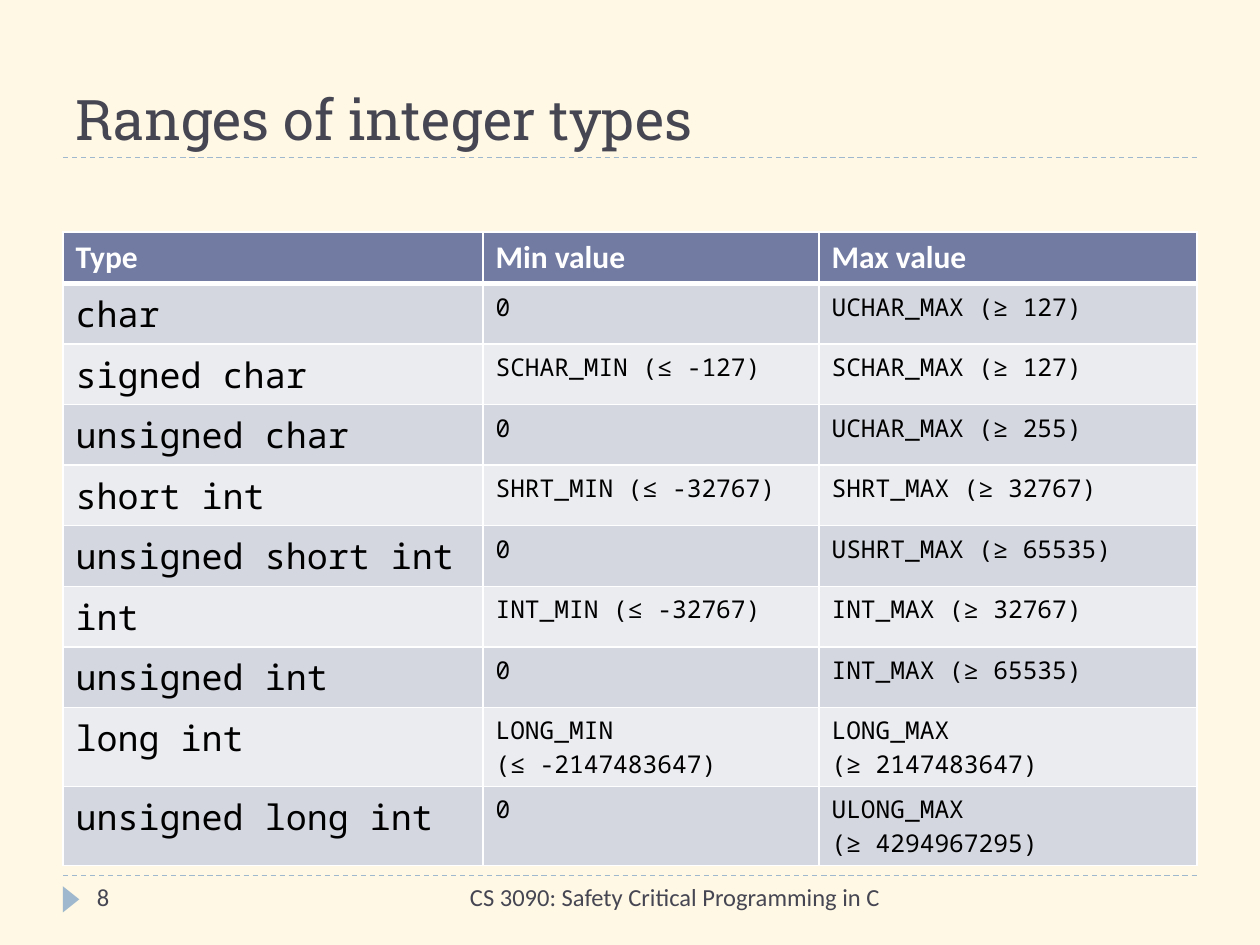
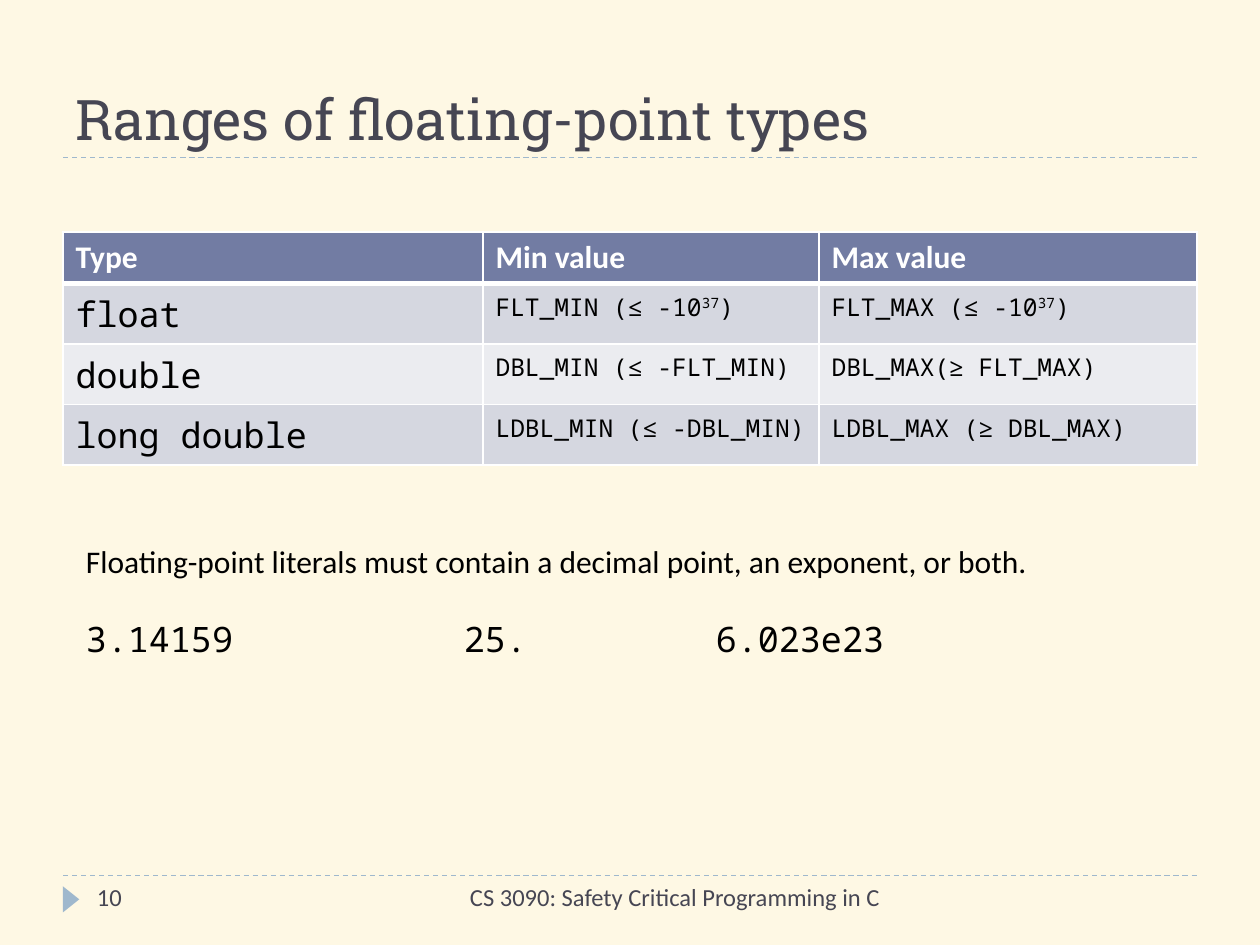
"""Build two slides on the ranges of the C number types."""
from dataclasses import dataclass

from lxml.etree import SubElement
from pptx import Presentation
from pptx.dml.color import RGBColor
from pptx.enum.dml import MSO_LINE_DASH_STYLE as Dash
from pptx.enum.shapes import MSO_CONNECTOR as Connector, MSO_SHAPE as Preset
from pptx.enum.text import MSO_ANCHOR as Anchor, PP_ALIGN as Align
from pptx.oxml.ns import qn
from pptx.util import Pt

COLORS = {
    "background": "FEF8E4",
    "accent": "9FB8CD",
    "heading": "464653",
    "text": "000000",
    "white": "FFFFFF",
    "header": "727CA3",
    "odd_row": "D5D7E0",
    "even_row": "EBECF0",
}
SERIF, SANS, MONO = "Roboto Slab", "Calibri", "Noto Sans Mono"
LEFT, WIDTH = 36, 648
TITLE_RULE, FOOTER_RULE = 90, 500.4
TABLE_TOP = 132.5
HEADER_HEIGHT, ROW_HEIGHT, TALL_ROW_HEIGHT = 29.6, 34.6, 45.2
COLUMN_WIDTHS = (240, 192, 216)
HEADINGS = ("Type", "Min value", "Max value")
FOOTER = "CS 3090: Safety Critical Programming in C"
TAB_STEP = 72


@dataclass(frozen=True)
class Box:
    left: float
    top: float
    width: float
    height: float

    def lengths(self) -> tuple:
        return tuple(Pt(n) for n in (self.left, self.top, self.width, self.height))


@dataclass(frozen=True)
class TypeRange:
    name: str
    minimum: str
    maximum: str

    def height(self) -> float:
        return TALL_ROW_HEIGHT if "\n" in self.maximum else ROW_HEIGHT


@dataclass(frozen=True)
class RangeSlide:
    title: str
    number: int
    ranges: tuple[TypeRange, ...]


INTEGERS = RangeSlide("Ranges of integer types", 8, (
    TypeRange("char", "0", "UCHAR_MAX (≥ 127)"),
    TypeRange("signed char", "SCHAR_MIN (≤ -127)", "SCHAR_MAX (≥ 127)"),
    TypeRange("unsigned char", "0", "UCHAR_MAX (≥ 255)"),
    TypeRange("short int", "SHRT_MIN (≤ -32767)", "SHRT_MAX (≥ 32767)"),
    TypeRange("unsigned short int", "0", "USHRT_MAX (≥ 65535)"),
    TypeRange("int", "INT_MIN (≤ -32767)", "INT_MAX (≥ 32767)"),
    TypeRange("unsigned int", "0", "INT_MAX (≥ 65535)"),
    TypeRange("long int", "LONG_MIN\n(≤ -2147483647)", "LONG_MAX\n(≥ 2147483647)"),
    TypeRange("unsigned long int", "0", "ULONG_MAX\n(≥ 4294967295)"),
))
FLOATS = RangeSlide("Ranges of floating-point types", 10, (
    TypeRange("float", "FLT_MIN (≤ -10^37^)", "FLT_MAX (≤ -10^37^)"),
    TypeRange("double", "DBL_MIN (≤ -FLT_MIN)", "DBL_MAX(≥ FLT_MAX)"),
    TypeRange("long double", "LDBL_MIN (≤ -DBL_MIN)", "LDBL_MAX (≥ DBL_MAX)"),
))


def rgb(name: str) -> RGBColor:
    return RGBColor.from_string(COLORS[name])


def write(paragraph, text: str, *, size: float, font: str = SANS, color: str = "text",
          bold: bool = False, align=Align.LEFT, before: float = 0) -> None:
    """Add text to a paragraph, raising the parts between carets."""
    paragraph.alignment = align
    paragraph.space_before = Pt(before)
    for index, part in enumerate(text.split("^")):
        run = paragraph.add_run()
        run.text = part
        run.font.name = font
        run.font.size = Pt(size)
        run.font.bold = bold
        run.font.color.rgb = rgb(color)
        if index % 2:
            run._r.get_or_add_rPr().set("baseline", "30000")


def add_text_box(slide, box: Box):
    frame = slide.shapes.add_textbox(*box.lengths()).text_frame
    frame.word_wrap = True
    return frame


def add_rule(slide, top: float) -> None:
    rule = slide.shapes.add_connector(
        Connector.STRAIGHT, Pt(LEFT), Pt(top), Pt(LEFT + WIDTH), Pt(top))
    rule.line.color.rgb = rgb("accent")
    rule.line.width = Pt(0.75)
    rule.line.dash_style = Dash.DASH
    SubElement(rule._element.spPr, qn("a:effectLst"))


def add_frame(slide, title: str, number: int) -> None:
    for top in (FOOTER_RULE, TITLE_RULE):
        add_rule(slide, top)
    marker = slide.shapes.add_shape(
        Preset.ISOSCELES_TRIANGLE, *Box(33.1, 509.2, 15, 9.4).lengths())
    marker.rotation = 90
    marker.shadow.inherit = False
    marker.fill.solid()
    marker.fill.fore_color.rgb = rgb("accent")
    marker.line.fill.background()

    heading = slide.shapes.title
    heading.left, heading.top, heading.width, heading.height = Box(
        LEFT, 12.5, WIDTH, TITLE_RULE - 12).lengths()
    heading.text_frame.vertical_anchor = Anchor.BOTTOM
    write(heading.text_frame.paragraphs[0], title, size=32, font=SERIF, color="heading")

    footer = add_text_box(slide, Box(222, FOOTER_RULE, 288, 28.8))
    write(footer.paragraphs[0], FOOTER, size=14, color="heading", align=Align.RIGHT)
    page = add_text_box(slide, Box(48.3, FOOTER_RULE, 156, 28.8))
    write(page.paragraphs[0], str(number), size=14, color="heading")


def style_cell(cell, fill: str, top: float = 1, bottom: float = 1) -> None:
    properties = cell._tc.get_or_add_tcPr()
    for side, width in (("L", 1), ("R", 1), ("T", top), ("B", bottom)):
        border = SubElement(properties, qn(f"a:ln{side}"), w=str(Pt(width)))
        paint = SubElement(border, qn("a:solidFill"))
        SubElement(paint, qn("a:srgbClr"), val=COLORS["white"])
    cell.fill.solid()
    cell.fill.fore_color.rgb = rgb(fill)


def add_range_table(slide, ranges: tuple[TypeRange, ...]) -> None:
    heights = [HEADER_HEIGHT, *(entry.height() for entry in ranges)]
    box = Box(LEFT, TABLE_TOP, WIDTH, sum(heights))
    table = slide.shapes.add_table(len(heights), len(HEADINGS), *box.lengths()).table
    for column, width in zip(table.columns, COLUMN_WIDTHS):
        column.width = Pt(width)
    for row, height in zip(table.rows, heights):
        row.height = Pt(height)
    for column, text in enumerate(HEADINGS):
        cell = table.cell(0, column)
        style_cell(cell, "header", bottom=3)
        write(cell.text_frame.paragraphs[0], text, size=18, color="white", bold=True)
    for row, entry in enumerate(ranges, start=1):
        for column, text in enumerate((entry.name, entry.minimum, entry.maximum)):
            cell = table.cell(row, column)
            style_cell(cell, "odd_row" if row % 2 else "even_row", top=3 if row == 1 else 1)
            frame = cell.text_frame
            for index, line in enumerate(text.split("\n")):
                paragraph = frame.add_paragraph() if index else frame.paragraphs[0]
                write(paragraph, line, size=14 if column else 20, font=MONO)


def add_tab_stops(paragraph, count: int) -> None:
    stops = SubElement(paragraph._p.get_or_add_pPr(), qn("a:tabLst"))
    for index in range(1, count + 1):
        SubElement(stops, qn("a:tab"), pos=str(Pt(index * TAB_STEP)), algn="l")


def add_literals(slide) -> None:
    frame = add_text_box(slide, Box(42, 306, 599, 75))
    write(frame.paragraphs[0],
          "Floating-point literals must contain a decimal point, an exponent, or both.",
          size=18)
    examples = frame.add_paragraph()
    write(examples, "3.14159\t\t25.\t\t6.023e23", size=20, font=MONO, before=22)
    add_tab_stops(examples, 5)


def add_range_slide(presentation, content: RangeSlide):
    slide = presentation.slides.add_slide(presentation.slide_layouts[5])
    add_frame(slide, content.title, content.number)
    add_range_table(slide, content.ranges)
    return slide


def main() -> None:
    presentation = Presentation()
    presentation.slide_width, presentation.slide_height = Pt(720), Pt(540)
    background = presentation.slide_master.background.fill
    background.solid()
    background.fore_color.rgb = rgb("background")
    add_range_slide(presentation, INTEGERS)
    add_literals(add_range_slide(presentation, FLOATS))
    presentation.save("out.pptx")


if __name__ == "__main__":
    main()
